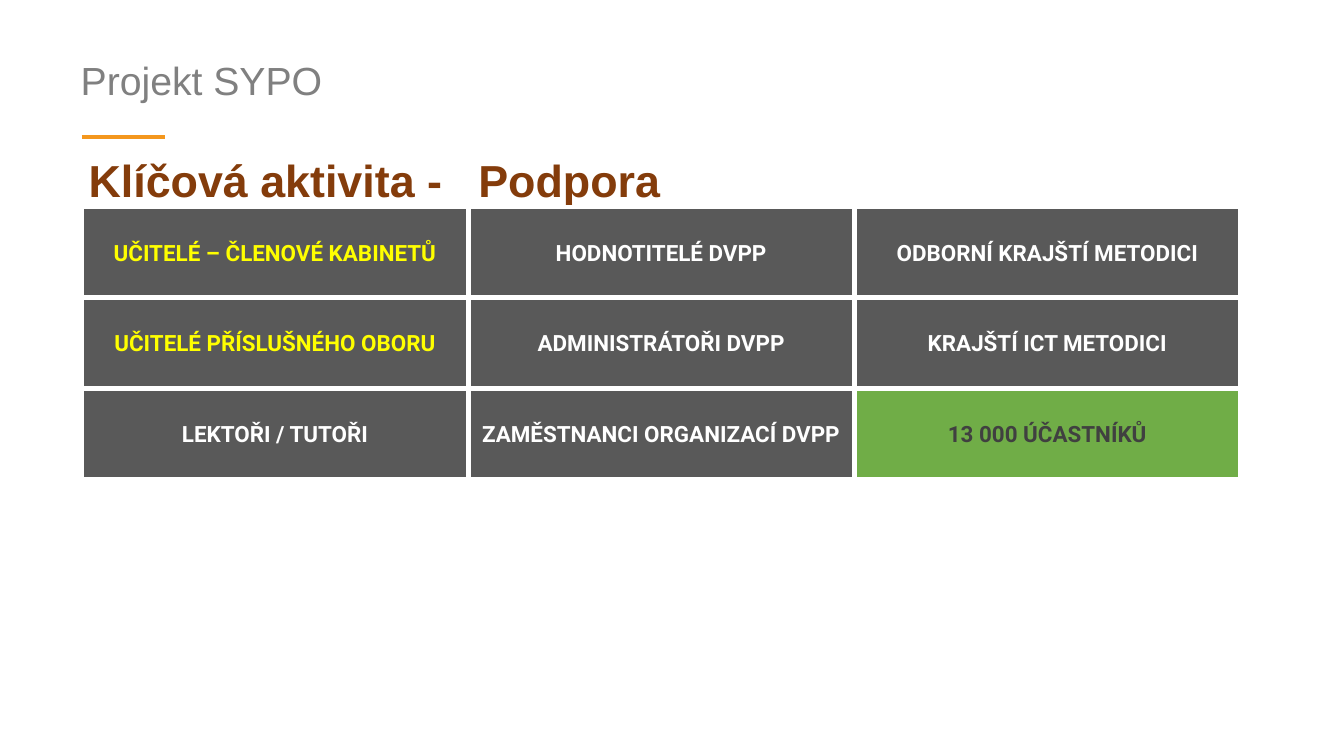
from lxml.etree import SubElement
from pptx import Presentation
from pptx.dml.color import RGBColor
from pptx.enum.shapes import MSO_CONNECTOR
from pptx.enum.text import MSO_ANCHOR, PP_ALIGN
from pptx.oxml.ns import qn
from pptx.util import Inches, Pt

COLORS = {
    "accent": "F4971D",
    "title": "808080",
    "heading": "843C0B",
    "cell": "595959",
    "total": "70AD47",
    "white": "FFFFFF",
    "yellow": "FFFF00",
    "dark": "404040",
}
GROUPS = [
    [("UČITELÉ – ČLENOVÉ KABINETŮ", "yellow", "cell"),
     ("HODNOTITELÉ DVPP", "white", "cell"),
     ("ODBORNÍ KRAJŠTÍ METODICI", "white", "cell")],
    [("UČITELÉ PŘÍSLUŠNÉHO OBORU", "yellow", "cell"),
     ("ADMINISTRÁTOŘI DVPP", "white", "cell"),
     ("KRAJŠTÍ ICT METODICI", "white", "cell")],
    [("LEKTOŘI / TUTOŘI", "white", "cell"),
     ("ZAMĚSTNANCI ORGANIZACÍ DVPP", "white", "cell"),
     ("13 000 ÚČASTNÍKŮ", "dark", "total")],
]


def color(name):
    return RGBColor.from_string(COLORS[name])


def set_values(target, values):
    for name, value in values.items():
        setattr(target, name, value)


def write_text(para, text, tint, spacing, font):
    para.line_spacing = spacing
    span = para.add_run()
    span.text = text
    set_values(span.font, font)
    span.font.color.rgb = color(tint)


def add_text(page, area, text, tint, spacing, font):
    box = page.shapes.add_textbox(*map(Inches, area))
    frame = box.text_frame
    set_values(frame, {"word_wrap": True, "vertical_anchor": MSO_ANCHOR.TOP})
    set_values(frame, {f"margin_{side}": Inches(0.05)
                       for side in ("left", "top", "right", "bottom")})
    para = frame.paragraphs[0]
    write_text(para, text, tint, spacing, font)
    return para


def add_header(page, area):
    left, top, width, height = area
    add_text(page, area, "Projekt SYPO", "title", 1.08,
             {"name": "Arial", "size": Pt(21)})
    start, level = left + 0.06, top + 0.68
    rule = page.shapes.add_connector(
        MSO_CONNECTOR.STRAIGHT, Inches(start), Inches(level),
        Inches(start + 0.62), Inches(level))
    rule.line.color.rgb = color("accent")
    rule.line.width = Pt(2)
    SubElement(rule._element.spPr, qn("a:effectLst"))


def add_heading(page, area):
    para = add_text(page, area, "Klíčová aktivita -\tPodpora", "heading", 0.9,
                    {"name": "Arial", "size": Pt(24), "bold": True})
    tabs = SubElement(para._p.get_or_add_pPr(), qn("a:tabLst"))
    SubElement(tabs, qn("a:tab"), pos=str(Inches(2.9)), algn="l")


def add_borders(cell):
    properties = cell._tc.get_or_add_tcPr()
    for side in ("lnL", "lnR", "lnT", "lnB"):
        border = SubElement(properties, qn(f"a:{side}"), w=str(Pt(3)))
        fill = SubElement(border, qn("a:solidFill"))
        SubElement(fill, qn("a:srgbClr"), val=COLORS["white"])


def add_groups(page, area):
    table = page.shapes.add_table(
        len(GROUPS), len(GROUPS[0]), *map(Inches, area)).table
    for row, group in zip(table.rows, GROUPS):
        for cell, (text, tint, fill) in zip(row.cells, group):
            set_values(cell, {
                "margin_left": Inches(0.07), "margin_right": Inches(0.07),
                "margin_top": 0, "margin_bottom": 0,
                "vertical_anchor": MSO_ANCHOR.MIDDLE})
            add_borders(cell)
            cell.fill.solid()
            cell.fill.fore_color.rgb = color(fill)
            para = cell.text_frame.paragraphs[0]
            para.alignment = PP_ALIGN.CENTER
            write_text(para, text, tint, 1.07,
                       {"name": "Roboto", "size": Pt(12), "bold": True})


def main():
    deck = Presentation()
    width = Inches(10)
    set_values(deck, {"slide_width": width, "slide_height": width * 9 // 16})
    page = deck.slides.add_slide(deck.slide_layouts[6])
    add_header(page, (0.55, 0.34, 8.69, 0.66))
    add_heading(page, (0.61, 1.13, 7.5, 0.53))
    add_groups(page, (0.61, 1.54, 8.62, 2.03))
    deck.save("out.pptx")


if __name__ == "__main__":
    main()
